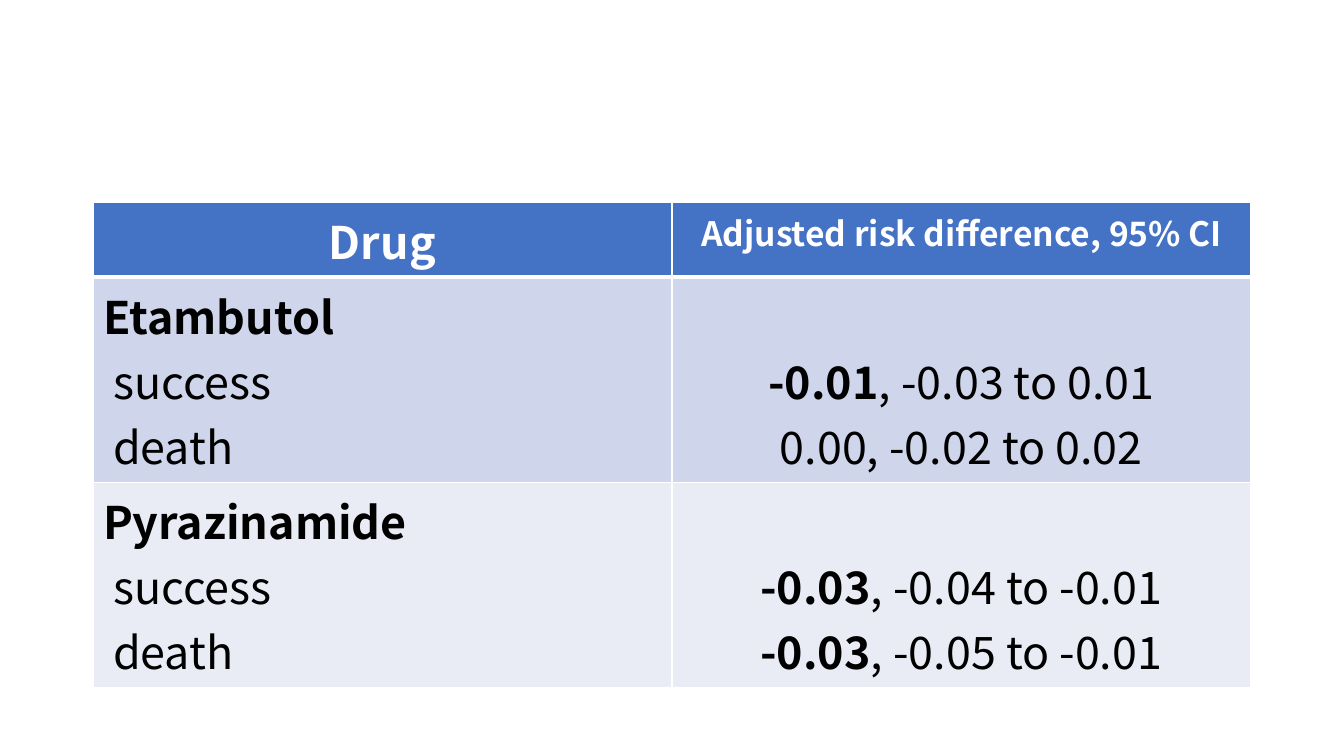
"""Build a slide with a table of adjusted risk differences by drug."""
import pptx
import pptx.dml.color
import pptx.enum.text
import pptx.oxml
import pptx.oxml.ns
import pptx.util

HEADINGS = [("Drug", 32), ("Adjusted risk difference, 95% CI", 24)]
DRUGS = [
    ("Etambutol", [
        ("success", "-0.01", ", -0.03 to 0.01"),
        ("death", "", "0.00, -0.02 to 0.02"),
    ]),
    ("Pyrazinamide", [
        ("success", "-0.03", ", -0.04 to -0.01"),
        ("death", "-0.03", ", -0.05 to -0.01"),
    ]),
]
THEME = {
    "font": "Noto Sans CJK KR",
    "body": 32,
    "header": "4472C4",
    "bands": ["CFD5EA", "E9EBF5"],
    "light": "FFFFFF",
    "dark": "000000",
    "rule": 1,
    "header_rule": 3,
}
PX = 914400 / 100.8
SLIDE = (1344, 756)
LEFT, TOP, COLUMN = 93, 202, 579
HEADER_HEIGHT, DRUG_HEIGHT = 74, 205
OUTCOME_INDENT = 10
ALIGN = pptx.enum.text.PP_ALIGN


def px(length):
    return pptx.util.Emu(round(length * PX))


def style_cell(cell, row, fill):
    properties = cell._tc.get_or_add_tcPr()
    top = THEME["header_rule"] if row == 1 else THEME["rule"]
    bottom = THEME["header_rule"] if row == 0 else THEME["rule"]
    sides = {"L": THEME["rule"], "R": THEME["rule"], "T": top, "B": bottom}
    for side, points in sides.items():
        properties.append(pptx.oxml.parse_xml(
            f'<a:ln{side} {pptx.oxml.ns.nsdecls("a")} w="{pptx.util.Pt(points)}">'
            f'<a:solidFill><a:srgbClr val="{THEME["light"]}"/></a:solidFill>'
            f'</a:ln{side}>'))
    cell.fill.solid()
    cell.fill.fore_color.rgb = pptx.dml.color.RGBColor.from_string(fill)


def write_lines(cell, lines, align, color, size=THEME["body"]):
    frame = cell.text_frame
    for index, (indent, runs) in enumerate(lines):
        paragraph = frame.add_paragraph() if index else frame.paragraphs[0]
        paragraph.alignment = align
        if indent:
            paragraph._p.get_or_add_pPr().set("marL", str(px(indent)))
        for text, bold in runs:
            if not text:
                continue
            run = paragraph.add_run()
            run.text = text
            run.font.name = THEME["font"]
            run.font.size = pptx.util.Pt(size)
            run.font.bold = bold
            run.font.color.rgb = pptx.dml.color.RGBColor.from_string(color)


def main():
    deck = pptx.Presentation()
    deck.slide_width, deck.slide_height = map(px, SLIDE)
    slide = deck.slides.add_slide(deck.slide_layouts[6])
    heights = [HEADER_HEIGHT] + [DRUG_HEIGHT] * len(DRUGS)
    risks = slide.shapes.add_table(
        len(heights), len(HEADINGS), px(LEFT), px(TOP),
        px(COLUMN * len(HEADINGS)), px(sum(heights))).table
    for row, height in zip(risks.rows, heights):
        row.height = px(height)

    for column, (heading, size) in enumerate(HEADINGS):
        cell = risks.cell(0, column)
        style_cell(cell, 0, THEME["header"])
        write_lines(cell, [(0, [(heading, True)])], ALIGN.CENTER, THEME["light"], size)

    for row, (drug, outcomes) in enumerate(DRUGS, start=1):
        names, differences = risks.cell(row, 0), risks.cell(row, 1)
        for cell in (names, differences):
            style_cell(cell, row, THEME["bands"][(row - 1) % 2])
        outcome_lines = [(OUTCOME_INDENT, [(name, False)]) for name, _, _ in outcomes]
        write_lines(names, [(0, [(drug, True)])] + outcome_lines, ALIGN.LEFT, THEME["dark"])
        difference_lines = [(0, [(estimate, True), (interval, False)])
                            for _, estimate, interval in outcomes]
        write_lines(differences, difference_lines, ALIGN.CENTER, THEME["dark"])
        differences.vertical_anchor = pptx.enum.text.MSO_ANCHOR.BOTTOM

    deck.save("out.pptx")


if __name__ == "__main__":
    main()
